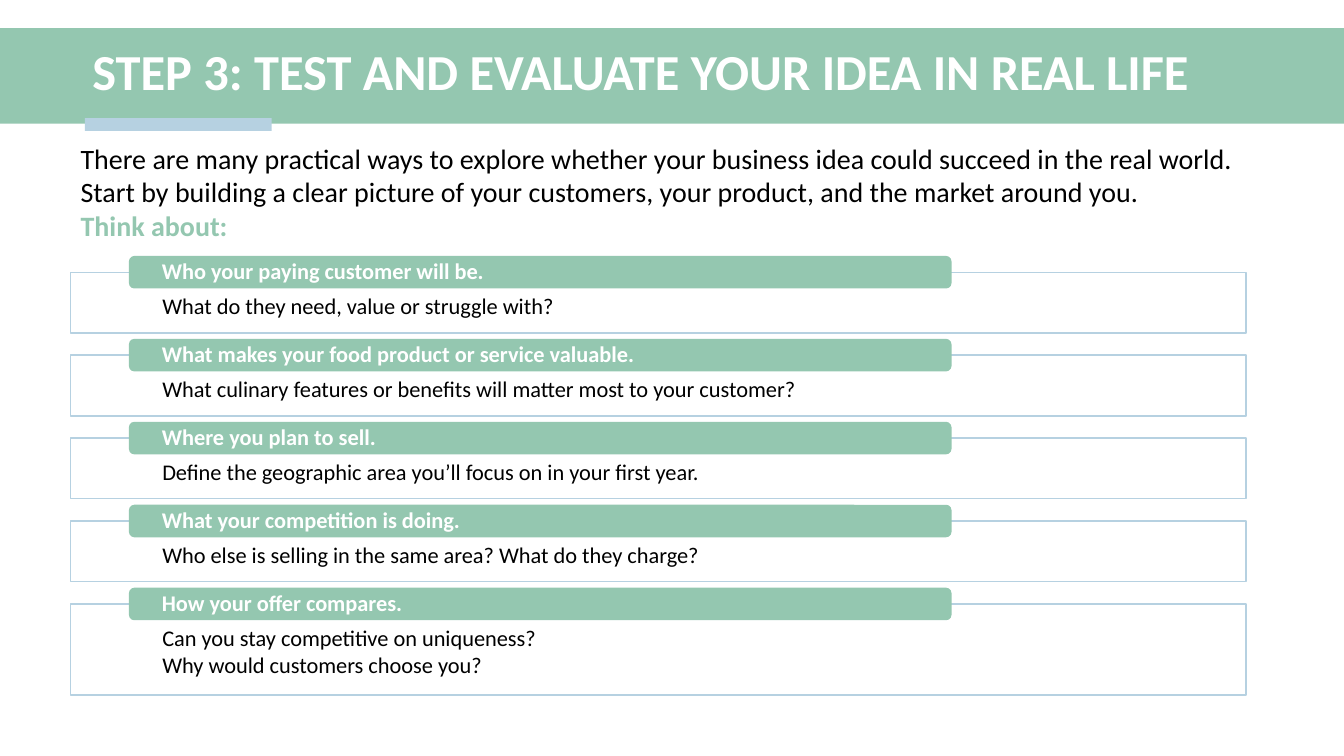
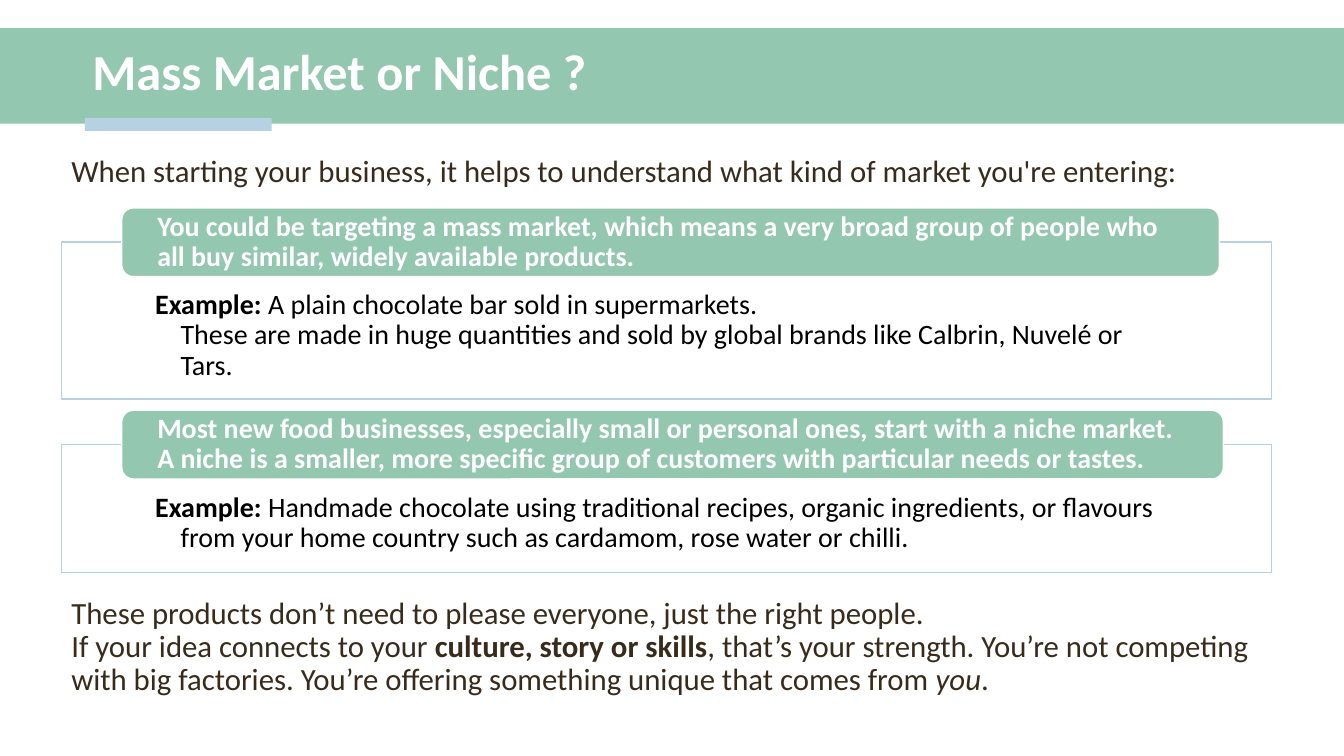
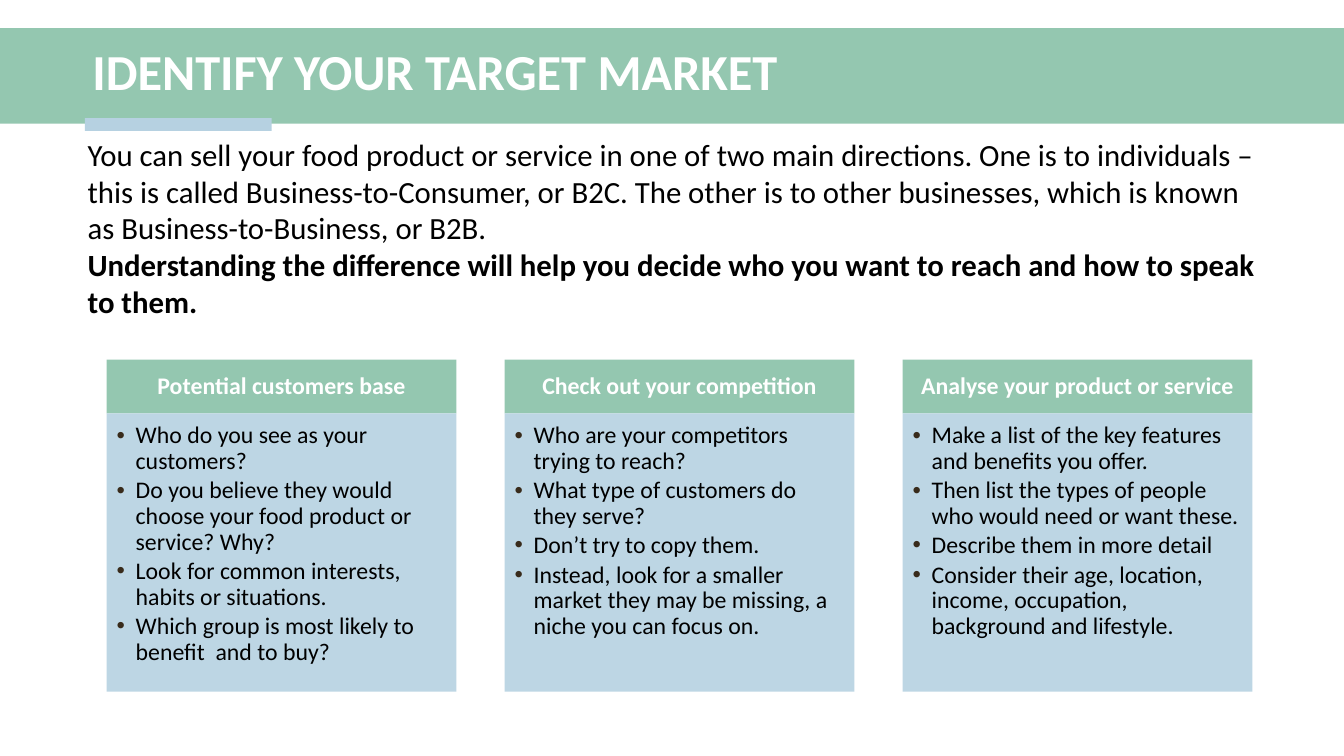
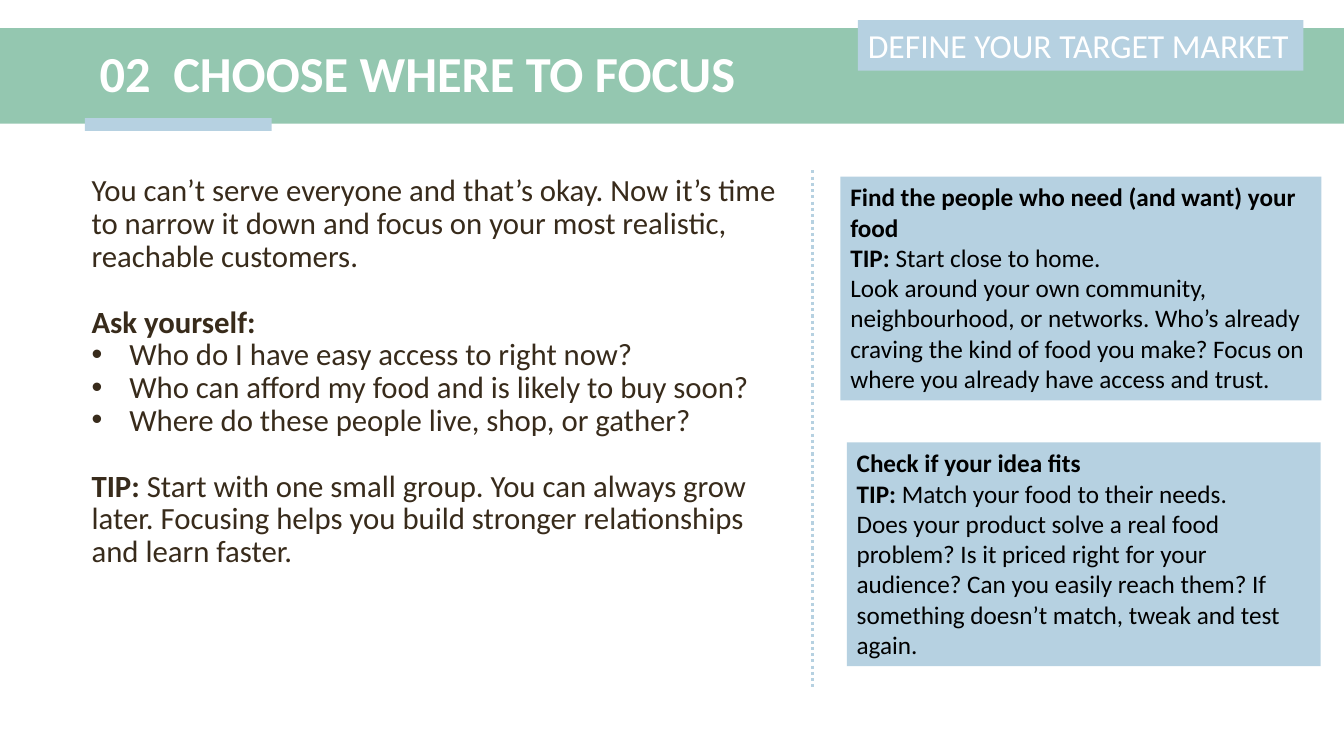
from dataclasses import dataclass

from lxml.etree import SubElement
from pptx import Presentation
from pptx.dml.color import RGBColor as RGB
from pptx.enum.dml import MSO_LINE
from pptx.enum.shapes import MSO_CONNECTOR as CONNECTOR, MSO_SHAPE as SHAPE
from pptx.enum.text import MSO_ANCHOR as ANCHOR, PP_ALIGN as ALIGN
from pptx.oxml.ns import qn
from pptx.util import Cm, Pt


@dataclass(frozen=True)
class Theme:
    font: str = "Calibri"
    green: str = "94C7B0"
    blue: str = "B6D1E1"
    pale_blue: str = "BDD6E4"
    white: str = "FFFFFF"
    black: str = "000000"
    brown: str = "382B1B"
    title: int = 36
    label: int = 24
    body: int = 22
    text: int = 20
    tip: int = 18
    column: int = 17
    row: int = 16
    body_line: Pt = Pt(23.4)


@dataclass
class Para:
    spans: str | list  # plain text, or (text, style) pairs with style "", "b" or "i"
    bold: bool = False
    color: str = ""
    before: float = 0
    hang: float = 0
    bullet: bool = False


theme = Theme()


def add_panel(page, at, fill, line=None, kind=SHAPE.RECTANGLE):
    panel = page.shapes.add_shape(kind, *map(Cm, at))
    panel.shadow.inherit = False
    panel.fill.solid()
    panel.fill.fore_color.rgb = RGB.from_string(fill)
    if line:
        panel.line.color.rgb = RGB.from_string(line)
        panel.line.width = Pt(1)
    else:
        panel.line.fill.background()
    return panel


def write(box, paras, size, color, spacing=None, after=0,
          insets=(0.25, 0.13, 0.25, 0.13), anchor=ANCHOR.TOP, align=ALIGN.LEFT):
    """Fill a box with Para objects; insets run left, top, right, bottom in cm."""
    frame = box.text_frame
    frame.word_wrap = True
    frame.vertical_anchor = anchor
    (frame.margin_left, frame.margin_top,
     frame.margin_right, frame.margin_bottom) = map(Cm, insets)
    for index, item in enumerate(paras):
        para = frame.add_paragraph() if index else frame.paragraphs[0]
        para.alignment = align
        if spacing:
            para.line_spacing = spacing
        para.space_before = Pt(item.before)
        para.space_after = Pt(after)
        props = para._p.get_or_add_pPr()
        if item.hang:
            props.set("marL", str(Cm(item.hang)))
            props.set("indent", str(-Cm(item.hang)))
        if item.bullet:
            bullet_color = SubElement(props, qn("a:buClr"))
            SubElement(bullet_color, qn("a:srgbClr")).set("val", theme.brown)
            SubElement(props, qn("a:buFont")).set("typeface", "Arial")
            SubElement(props, qn("a:buChar")).set("char", "•")
        para.font.name = theme.font
        para.font.size = Pt(size)
        para.font.bold = item.bold
        para.font.color.rgb = RGB.from_string(item.color or color)
        spans = [(item.spans, "")] if isinstance(item.spans, str) else item.spans
        for text, style in spans:
            if text == "\n":
                para.add_line_break()
                continue
            span = para.add_run()
            span.text = text
            if style == "b":
                span.font.bold = True
            elif style == "i":
                span.font.italic = True


deck = Presentation()
deck.slide_width, deck.slide_height = Cm(33.87), Cm(19.05)

# Shared title band
titles = [
    ("STEP 3: TEST AND EVALUATE YOUR IDEA IN REAL LIFE", 2.08, 0.86),
    ("Mass Market or Niche ?", 2.08, 0.86),
    ("IDENTIFY YOUR TARGET MARKET", 2.08, 0.86),
    ("02  CHOOSE WHERE TO FOCUS", 2.26, 0.91),
]
pages = []
for title, left, top in titles:
    page = deck.slides.add_slide(deck.slide_layouts[6])
    add_panel(page, (0, 0.71, 33.87, 2.41), theme.green)
    add_panel(page, (2.14, 2.98, 4.71, 0.32), theme.blue)
    box = page.shapes.add_textbox(Cm(left), Cm(top), Cm(30.3), Cm(2))
    write(box, [Para(title, bold=True)], theme.title, theme.white,
          spacing=0.9, anchor=ANCHOR.MIDDLE)
    pages.append(page)
step_page, market_page, target_page, focus_page = pages

# Step 3: questions to think about
intro = step_page.shapes.add_textbox(Cm(1.78), Cm(3.43), Cm(29.62), Cm(2.82))
write(intro, [
    Para("There are many practical ways to explore whether your business idea could "
         "succeed in the real world. Start by building a clear picture of your "
         "customers, your product, and the market around you."),
    Para("Think about:", bold=True, color=theme.green),
], theme.text, theme.black)

questions = [
    ("Who your paying customer will be.", ["What do they need, value or struggle with?"]),
    ("What makes your food product or service valuable.",
     ["What culinary features or benefits will matter most to your customer?"]),
    ("Where you plan to sell.",
     ["Define the geographic area you’ll focus on in your first year."]),
    ("What your competition is doing.",
     ["Who else is selling in the same area? What do they charge?"]),
    ("How your offer compares.",
     ["Can you stay competitive on uniqueness?", "Why would customers choose you?"]),
]
for index, (heading, details) in enumerate(questions):
    top = 6.86 + 2.09 * index
    height = 0.77 + 0.76 * len(details)
    frame_panel = add_panel(step_page, (1.78, top, 29.62, height), theme.white, theme.blue)
    write(frame_panel, [Para(detail) for detail in details], theme.row, theme.black,
          spacing=0.9, after=2.5, insets=(2.31, 0.58, 2.31, 0.3))
    tag = add_panel(step_page, (3.25, top - 0.41, 20.73, 0.82), theme.green,
                    kind=SHAPE.ROUNDED_RECTANGLE)
    write(tag, [Para(heading, bold=True)], theme.row, theme.white, spacing=0.9,
          insets=(0.79, 0, 0.79, 0), anchor=ANCHOR.MIDDLE)

# Mass market or niche
markets = [
    (6.1, 3.96, 27.66,
     "You could be targeting a mass market, which means a very broad group of people "
     "who all buy similar, widely available products.",
     [("Example:", "b"), (" A plain chocolate bar sold in supermarkets.", ""), ("\n", ""),
      ("These are made in huge quantities and sold by global brands like Calbrin, "
       "Nuvelé or Tars.", "")]),
    (11.2, 3.23, 27.76,
     "Most new food businesses, especially small or personal ones, start with a niche "
     "market. A niche is a smaller, more specific group of customers with particular "
     "needs or tastes.",
     [("Example:", "b"),
      (" Handmade chocolate using traditional recipes, organic ingredients, or flavours "
       "from your home country such as cardamom, rose water or chilli.", "")]),
]
for top, height, tag_width, heading, example in markets:
    frame_panel = add_panel(market_page, (1.55, top, 30.5, height), theme.white, theme.blue)
    write(frame_panel, [Para(example, hang=0.64)], theme.text, theme.black,
          spacing=0.9, insets=(2.36, 1.22, 2.36, 0.41))
    tag = add_panel(market_page, (3.07, top - 0.86, tag_width, 1.73), theme.green,
                    theme.white, SHAPE.ROUNDED_RECTANGLE)
    write(tag, [Para(heading, bold=True)], theme.text, theme.white, spacing=0.9,
          insets=(0.81, 0, 0.81, 0), anchor=ANCHOR.MIDDLE)

opening = [Para("When starting your business, it helps to understand what kind of market "
                "you're entering:")]
closing = [
    Para("These products don’t need to please everyone, just the right people."),
    Para([("If your idea connects to your ", ""), ("culture, story or skills", "b"),
          (", that’s your strength. You’re not competing with big factories. You’re "
           "offering something unique that comes from ", ""), ("you", "i"), (".", "")]),
]
for top, height, paras in [(3.81, 1.35, opening), (14.94, 3.25, closing)]:
    box = market_page.shapes.add_textbox(Cm(1.55), Cm(top), Cm(30.5), Cm(height))
    write(box, paras, theme.body, theme.brown, spacing=theme.body_line)

# Target market columns
intro = target_page.shapes.add_textbox(Cm(1.96), Cm(3.28), Cm(29.97), Cm(4.95))
write(intro, [
    Para("You can sell your food product or service in one of two main directions. One is "
         "to individuals – this is called Business-to-Consumer, or B2C. The other is to "
         "other businesses, which is known as Business-to-Business, or B2B."),
    Para("Understanding the difference will help you decide who you want to reach and how "
         "to speak to them.", bold=True),
], theme.body, theme.black)

columns = [
    ("Potential customers base",
     ["Who do you see as your customers?",
      "Do you believe they would choose your food product or service? Why?",
      "Look for common interests, habits or situations.",
      "Which group is most likely to benefit  and to buy?"]),
    ("Check out your competition",
     ["Who are your competitors trying to reach?",
      "What type of customers do they serve?",
      "Don’t try to copy them.",
      "Instead, look for a smaller market they may be missing, a niche you can focus on."]),
    ("Analyse your product or service",
     ["Make a list of the key features and benefits you offer.",
      "Then list the types of people who would need or want these.",
      "Describe them in more detail",
      "Consider their age, location, income, occupation, background and lifestyle."]),
]
for index, (heading, points) in enumerate(columns):
    left = 2.69 + 10.03 * index
    header = add_panel(target_page, (left, 9.06, 8.81, 1.36), theme.green)
    write(header, [Para(heading, bold=True)], theme.column, theme.white, spacing=0.9,
          insets=(0.33, 0.2, 0.33, 0.2), anchor=ANCHOR.MIDDLE, align=ALIGN.CENTER)
    card = add_panel(target_page, (left, 10.42, 8.81, 7.01), theme.pale_blue)
    write(card, [Para(point, hang=0.48, bullet=True) for point in points],
          theme.column, theme.black, spacing=0.9, after=2.5,
          insets=(0.25, 0.25, 0.33, 0.38))

# Choose where to focus
advice = focus_page.shapes.add_textbox(Cm(2.06), Cm(4.29), Cm(18.01), Cm(12.98))
write(advice, [
    Para("You can’t serve everyone and that’s okay. Now it’s time to narrow it down and "
         "focus on your most realistic, reachable customers."),
    Para("Ask yourself:", bold=True, before=23.4),
    Para("Who do I have easy access to right now?", hang=0.95, bullet=True),
    Para("Who can afford my food and is likely to buy soon?", hang=0.95, bullet=True),
    Para("Where do these people live, shop, or gather?", hang=0.95, bullet=True),
    Para([("TIP:", "b"),
          (" Start with one small group. You can always grow later. Focusing helps you "
           "build stronger relationships and learn faster.", "")], before=23.4),
], theme.body, theme.brown, spacing=theme.body_line)

divider = focus_page.shapes.add_connector(
    CONNECTOR.STRAIGHT, Cm(20.47), Cm(4.29), Cm(20.47), Cm(17.3))
divider.line.color.rgb = RGB.from_string(theme.blue)
divider.line.width = Pt(2.25)
divider.line.dash_style = MSO_LINE.ROUND_DOT
SubElement(divider._element.spPr, qn("a:effectLst"))

label = add_panel(focus_page, (21.62, 0.51, 11.23, 1.27), theme.blue)
write(label, [Para("DEFINE YOUR TARGET MARKET")], theme.label, theme.white)

tips = [
    ((21.18, 4.45, 12.12, 5.64), "Find the people who need (and want) your food",
     " Start close to home.",
     "Look around your own community, neighbourhood, or networks. Who’s already craving "
     "the kind of food you make? Focus on where you already have access and trust."),
    ((21.34, 11.15, 11.94, 5.64), "Check if your idea fits",
     " Match your food to their needs.",
     "Does your product solve a real food problem? Is it priced right for your audience? "
     "Can you easily reach them? If something doesn’t match, tweak and test again."),
]
for at, heading, tip, detail in tips:
    card = add_panel(focus_page, at, theme.blue)
    write(card, [Para(heading, bold=True), Para([("TIP:", "b"), (tip, "")]), Para(detail)],
          theme.tip, theme.black)

deck.save("out.pptx")
